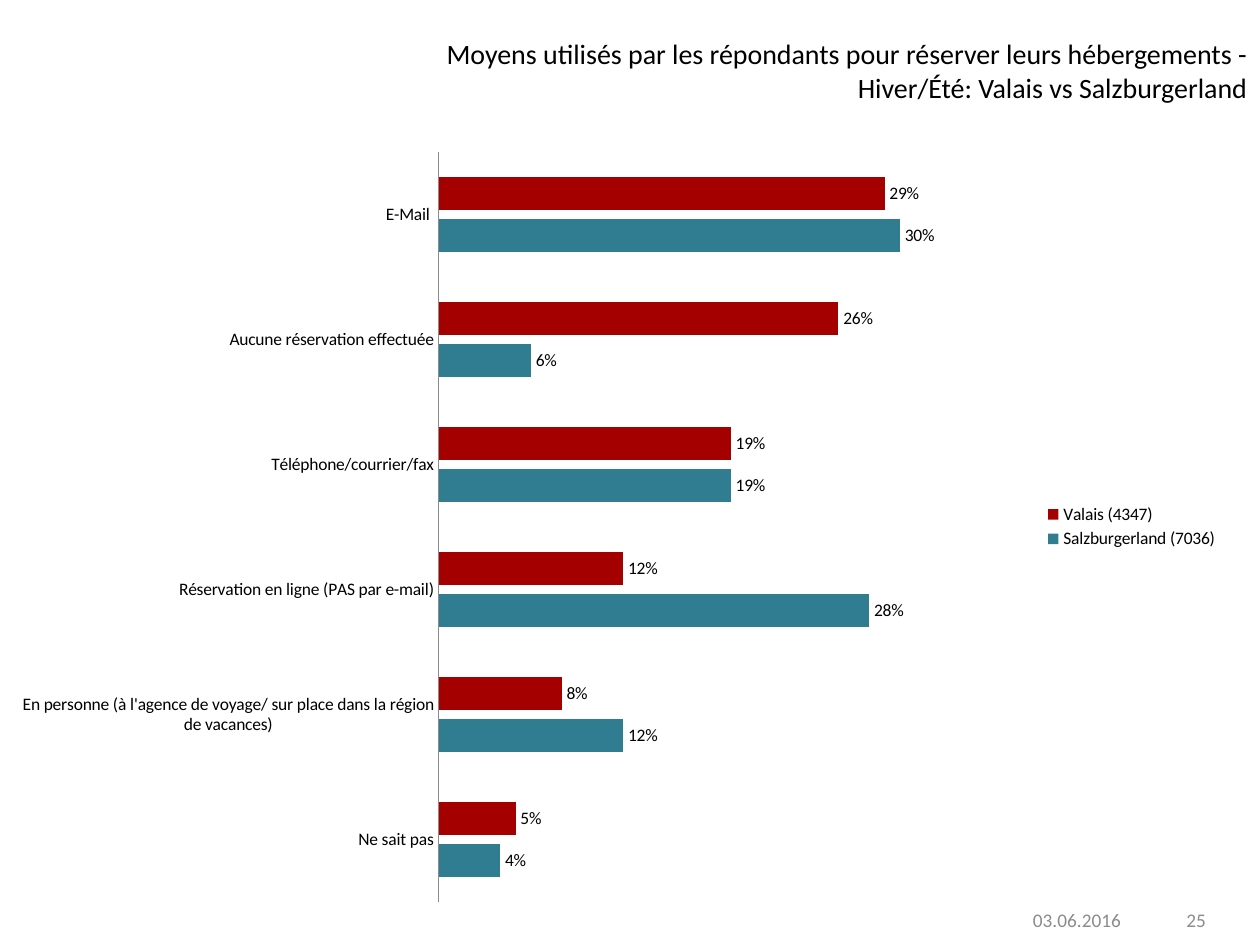
import pptx
import pptx.chart.data
import pptx.dml.color
import pptx.enum.chart
import pptx.enum.text
import pptx.oxml
import pptx.oxml.ns
import pptx.util
from pptx.util import Inches

BLACK = pptx.dml.color.RGBColor(0x00, 0x00, 0x00)
GREY = pptx.dml.color.RGBColor(0x8C, 0x8C, 0x8C)
TEAL = pptx.dml.color.RGBColor(0x30, 0x7C, 0x90)
RED = pptx.dml.color.RGBColor(0xA4, 0x00, 0x00)
ALIGN = pptx.enum.text.PP_ALIGN
ANCHOR = pptx.enum.text.MSO_ANCHOR

CATEGORIES = [
    "Ne sait pas",
    "En personne (à l'agence de voyage/ sur place dans la région de vacances)",
    "Réservation en ligne (PAS par e-mail)",
    "Téléphone/courrier/fax",
    "Aucune réservation effectuée",
    "E-Mail ",
]
SERIES = [
    ("Salzburgerland (7036)", TEAL, [0.04, 0.12, 0.28, 0.19, 0.06, 0.30]),
    ("Valais (4347)", RED, [0.05, 0.08, 0.12, 0.19, 0.26, 0.29]),
]
PLOT = {"x": 0.342, "y": 0.037, "w": 0.447, "h": 0.927}


def set_attrs(obj, values):
    """Set each attribute of obj from a dict."""
    for name, value in values.items():
        setattr(obj, name, value)


def set_font(font, size, color):
    """Apply the slide's typeface with a size and colour."""
    set_attrs(font, {"name": "Calibri", "size": pptx.util.Pt(size), "bold": False})
    font.color.rgb = color


def write_text(sp, box, text, size, color, align, anchor):
    """Place a text shape in a box and fill it with one paragraph."""
    set_attrs(sp, dict(zip(("left", "top", "width", "height"), map(Inches, box))))
    tf = sp.text_frame
    set_attrs(tf, {"word_wrap": True, "vertical_anchor": anchor,
                   "auto_size": pptx.enum.text.MSO_AUTO_SIZE.NONE})
    p = tf.paragraphs[0]
    p.alignment = align
    r = p.add_run()
    r.text = text
    set_font(r.font, size, color)


def add_title(s, box):
    """Fill the title placeholder."""
    text = ("Moyens utilisés par les répondants pour réserver leurs hébergements - "
            "Hiver/Été: Valais vs Salzburgerland")
    write_text(s.shapes.title, box, text, 16, BLACK, ALIGN.RIGHT, ANCHOR.TOP)


def add_footer(s, box):
    """Add the date and the page number in a footer band."""
    left, top, width, height = box
    for text, w, align in (("03.06.2016", 1, ALIGN.LEFT), ("25", width, ALIGN.RIGHT)):
        part = (left, top, w, height)
        sp = s.shapes.add_textbox(*map(Inches, part))
        write_text(sp, part, text, 11, GREY, align, ANCHOR.MIDDLE)


def set_plot_layout(chart, layout):
    """Fix the inner plot area as fractions of the chart."""
    area = chart._chartSpace.chart.plotArea
    for old in area.findall(pptx.oxml.ns.qn("c:layout")):
        area.remove(old)
    modes = "".join(f'<c:{key}Mode val="edge"/>' for key in "xy")
    sizes = "".join(f'<c:{key} val="{value}"/>' for key, value in layout.items())
    area.insert(0, pptx.oxml.parse_xml(
        f'<c:layout {pptx.oxml.ns.nsdecls("c")}><c:manualLayout>'
        f'<c:layoutTarget val="inner"/>{modes}{sizes}</c:manualLayout></c:layout>'))


def add_booking_chart(s, box):
    """Add the clustered bar chart of booking channels."""
    data = pptx.chart.data.CategoryChartData(number_format="0%")
    data.categories = CATEGORIES
    for name, _, values in SERIES:
        data.add_series(name, values)
    kind = pptx.enum.chart.XL_CHART_TYPE.BAR_CLUSTERED
    chart = s.shapes.add_chart(kind, *map(Inches, box), data).chart
    set_attrs(chart, {"has_title": False, "has_legend": True})
    set_font(chart.font, 10, BLACK)
    set_attrs(chart.legend, {"position": pptx.enum.chart.XL_LEGEND_POSITION.RIGHT,
                             "include_in_layout": False})

    no_tick = pptx.enum.chart.XL_TICK_MARK.NONE
    set_attrs(chart.category_axis, {"major_tick_mark": no_tick, "minor_tick_mark": no_tick})
    line = chart.category_axis.format.line
    line.color.rgb = GREY
    line.width = pptx.util.Pt(0.75)
    set_attrs(chart.value_axis, {"visible": False, "has_major_gridlines": False,
                                 "minimum_scale": 0, "maximum_scale": 0.35})
    chart.value_axis.tick_labels.number_format = "0.00%"

    plot = chart.plots[0]
    set_attrs(plot, {"gap_width": 150, "overlap": -25, "vary_by_categories": False})
    for ser, (_, color, _) in zip(plot.series, SERIES):
        ser.invert_if_negative = False
        ser.format.fill.solid()
        ser.format.fill.fore_color.rgb = color
        set_attrs(ser.data_labels, {
            "show_value": True, "number_format": "0%", "number_format_is_linked": False,
            "position": pptx.enum.chart.XL_LABEL_POSITION.OUTSIDE_END})
    set_plot_layout(chart, PLOT)


def main():
    """Build and save the slide."""
    prs = pptx.Presentation()
    set_attrs(prs, {"slide_width": Inches(10), "slide_height": Inches(7.5)})
    s = prs.slides.add_slide(prs.slide_layouts[5])
    add_footer(s, (8.1, 7.1, 1.57, 0.4))
    add_title(s, (2.69, 0.24, 7.31, 0.64))
    add_booking_chart(s, (0.18, 0.97, 9.59, 6.42))
    prs.save("out.pptx")


if __name__ == "__main__":
    main()
